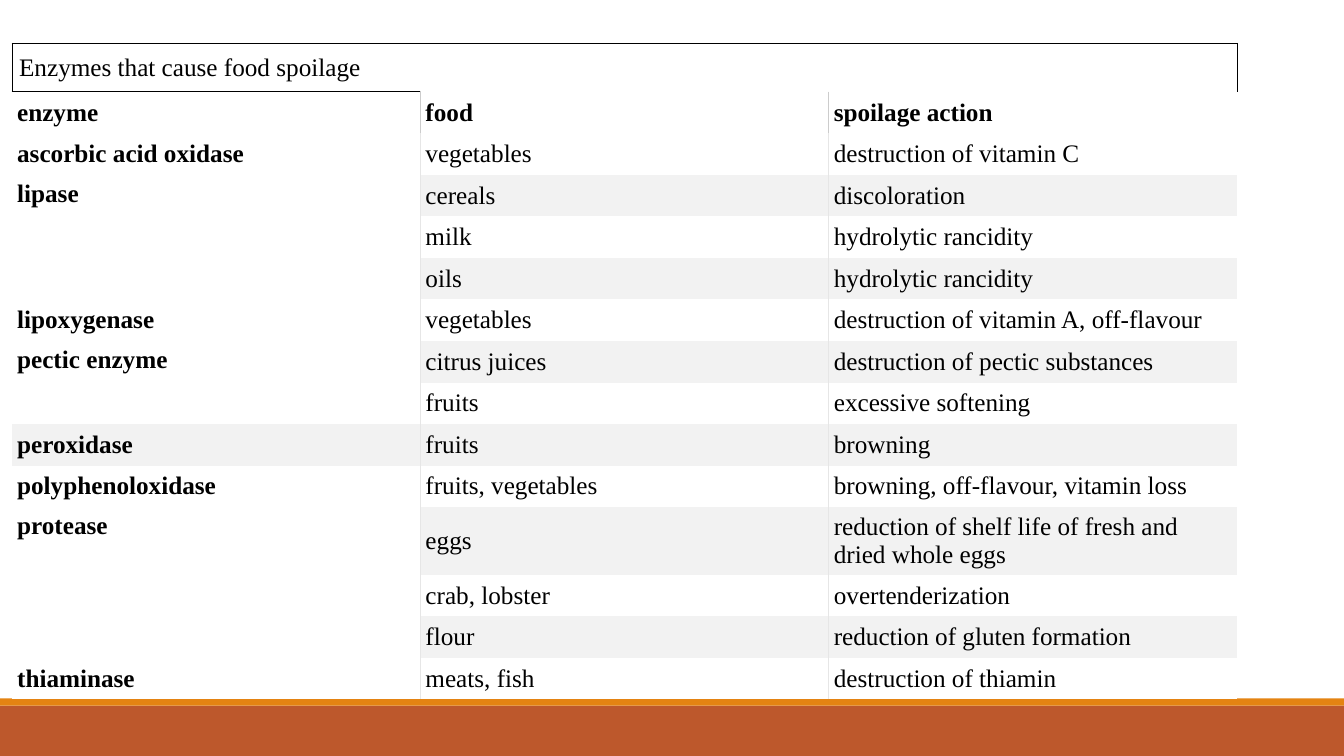
from dataclasses import dataclass

from lxml import etree
from pptx import Presentation
from pptx.dml.color import RGBColor
from pptx.enum.shapes import MSO_SHAPE
from pptx.enum.text import MSO_ANCHOR
from pptx.oxml.ns import qn
from pptx.util import Inches, Pt

RECT = MSO_SHAPE.RECTANGLE
TOP, MIDDLE = MSO_ANCHOR.TOP, MSO_ANCHOR.MIDDLE
NO_GRID_STYLE = "{2D5ABB26-0587-4C30-8999-92F81FD0307C}"
COLORS = {
    "text": "000000",
    "white": "FFFFFF",
    "shade": "F2F2F2",
    "header_line": "CCCCCC",
    "body_line": "E6E6E6",
    "rust": "BD582C",
    "orange": "E48312",
}
FONT = {"name": "Times New Roman", "size": Pt(18)}
CAPTION_MARGINS = (0.07, 0.03)
CELL_MARGINS = (0.05, 0.05)
SIDES = "LRTB"  # order in which a cell stores its borders


@dataclass
class Band:
    top: float
    height: float
    color: str


@dataclass
class Enzyme:
    name: str
    effects: list[tuple[str, str]]  # food, spoilage action


BANDS = [Band(7, 0.5, "rust"), Band(6.93, 0.07, "orange")]
CAPTION = "Enzymes that cause food spoilage"
HEADERS = ["enzyme", "food", "spoilage action"]
ENZYMES = [
    Enzyme("ascorbic acid oxidase", [("vegetables", "destruction of vitamin C")]),
    Enzyme("lipase", [("cereals", "discoloration"),
                      ("milk", "hydrolytic rancidity"),
                      ("oils", "hydrolytic rancidity")]),
    Enzyme("lipoxygenase", [("vegetables", "destruction of vitamin A, off-flavour")]),
    Enzyme("pectic enzyme", [("citrus juices", "destruction of pectic substances"),
                             ("fruits", "excessive softening")]),
    Enzyme("peroxidase", [("fruits", "browning")]),
    Enzyme("polyphenoloxidase", [("fruits, vegetables",
                                  "browning, off-flavour, vitamin loss")]),
    Enzyme("protease", [("eggs", "reduction of shelf life of fresh and dried whole eggs"),
                        ("crab, lobster", "overtenderization"),
                        ("flour", "reduction of gluten formation")]),
    Enzyme("thiaminase", [("meats, fish", "destruction of thiamin")]),
]
TABLE_HEIGHT, CAPTION_HEIGHT, TALL_HEIGHT = 6.51, 0.48, 0.67
TALL_ROW = 11  # the one row whose text takes two lines


def add_band(s, band: Band) -> None:
    shape = s.shapes.add_shape(RECT, 0, Inches(band.top), prs.slide_width,
                               Inches(band.height))
    shape.shadow.inherit = False
    shape.fill.solid()
    shape.fill.fore_color.rgb = RGBColor.from_string(COLORS[band.color])
    shape.line.fill.background()


def set_borders(cell, borders: dict[str, str]) -> None:
    tc_pr = cell._tc.get_or_add_tcPr()
    for side in SIDES:
        ln = etree.SubElement(tc_pr, qn(f"a:ln{side}"), w=str(Pt(0.75)))
        if side in borders:
            fill = etree.SubElement(ln, qn("a:solidFill"))
            etree.SubElement(fill, qn("a:srgbClr"), val=COLORS[borders[side]])
        else:
            etree.SubElement(ln, qn("a:noFill"))


def fill_cell(cell, text: str, borders: dict[str, str], fill: str = "",
              bold: bool = False, anchor=MIDDLE, margins=CELL_MARGINS) -> None:
    set_borders(cell, borders)
    if fill:
        cell.fill.solid()
        cell.fill.fore_color.rgb = RGBColor.from_string(COLORS[fill])
    else:
        cell.fill.background()
    cell.vertical_anchor = anchor
    cell.margin_left = cell.margin_right = Inches(margins[0])
    cell.margin_top = cell.margin_bottom = Inches(margins[1])
    r = cell.text_frame.paragraphs[0].add_run()
    r.text = text
    for name, value in {**FONT, "bold": bold}.items():
        setattr(r.font, name, value)
    r.font.color.rgb = RGBColor.from_string(COLORS["text"])


def inner_borders(col: int, color: str) -> dict[str, str]:
    """Vertical lines between columns, none at the outer edges."""
    sides = ("R", "LR", "L")[col]
    return {side: color for side in sides}


def add_enzyme_table(s) -> None:
    row_count = 2 + sum(len(e.effects) for e in ENZYMES)
    frame = s.shapes.add_table(row_count, len(HEADERS), Inches(0.12), Inches(0.43),
                               Inches(12.15), Inches(TABLE_HEIGHT))
    table = frame.table
    table._tbl.tblPr.find(qn("a:tableStyleId")).text = NO_GRID_STYLE
    table.horz_banding = False
    table.first_row = False
    row_height = (TABLE_HEIGHT - CAPTION_HEIGHT - TALL_HEIGHT) / (row_count - 2)
    special = {0: CAPTION_HEIGHT, TALL_ROW: TALL_HEIGHT}
    for i, row in enumerate(table.rows):
        row.height = Inches(special.get(i, row_height))

    # Caption and column headings
    table.cell(0, 0).merge(table.cell(0, 2))
    fill_cell(table.cell(0, 0), CAPTION, {side: "text" for side in SIDES},
              margins=CAPTION_MARGINS)
    for col, heading in enumerate(HEADERS):
        borders = {**inner_borders(col, "header_line"), "B": "body_line"}
        if col == 0:
            borders["T"] = "text"
        fill_cell(table.cell(1, col), heading, borders, bold=True)

    # One group of rows per enzyme, every other row shaded
    row = 2
    for enzyme in ENZYMES:
        start, span = row, len(enzyme.effects)
        for effect in enzyme.effects:
            shade = "shade" if row % 2 else "white"
            for col, text in enumerate(effect, start=1):
                fill_cell(table.cell(row, col), text,
                          inner_borders(col, "body_line"), shade)
            row += 1
        name_cell = table.cell(start, 0)
        if span > 1:
            name_cell.merge(table.cell(row - 1, 0))
        name_fill = "shade" if span == 1 and start % 2 else "white"
        fill_cell(name_cell, enzyme.name, inner_borders(0, "body_line"), name_fill,
                  bold=True, anchor=TOP if span > 1 else MIDDLE)


prs = Presentation()
prs.slide_width, prs.slide_height = Inches(13.33), Inches(7.5)
s = prs.slides.add_slide(prs.slide_layouts[6])

# Footer bands, then the table
for band in BANDS:
    add_band(s, band)
add_enzyme_table(s)

prs.save("out.pptx")
